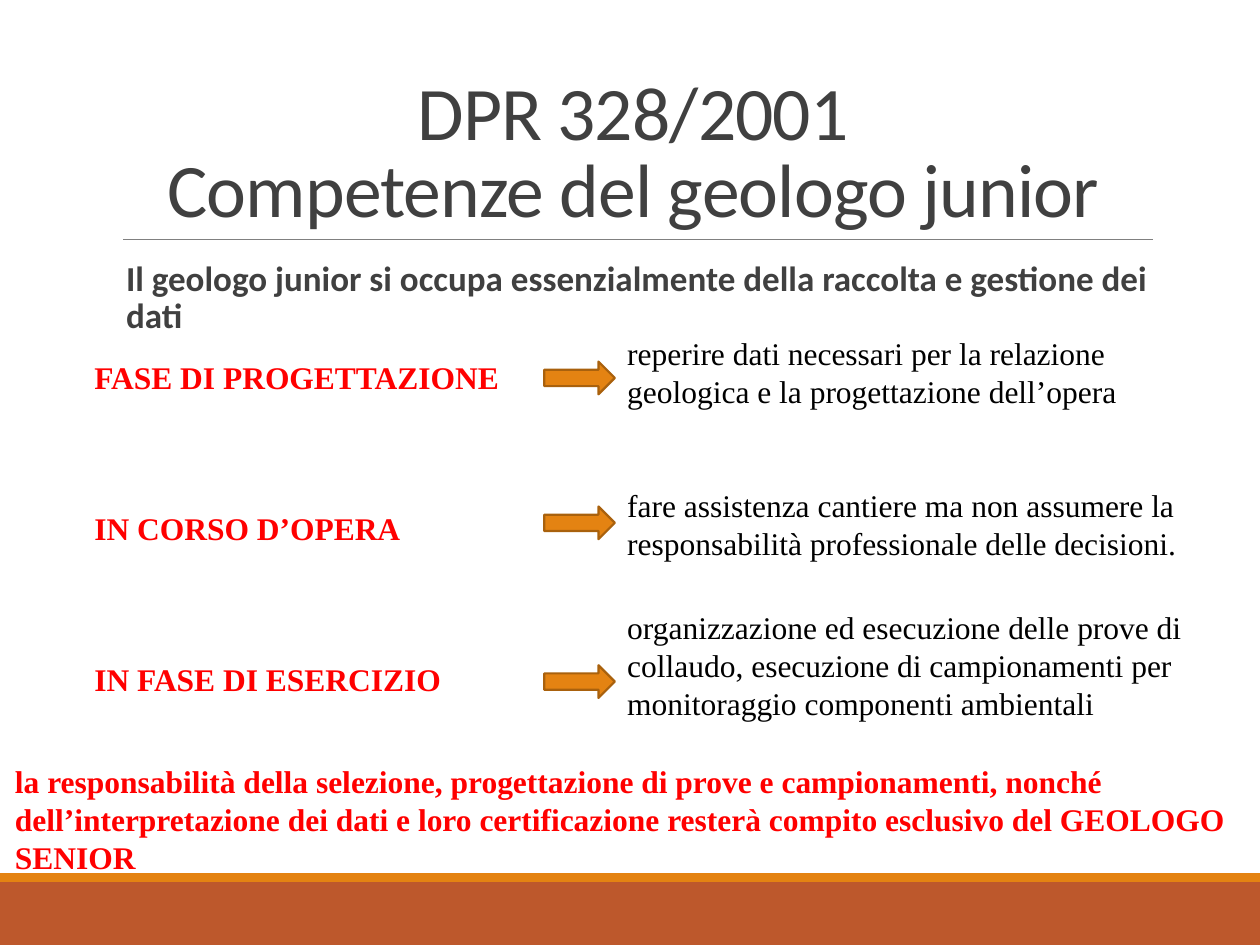
from lxml import etree
from pptx import Presentation
from pptx.dml.color import RGBColor
from pptx.enum.shapes import MSO_CONNECTOR, MSO_SHAPE
from pptx.enum.text import MSO_ANCHOR, MSO_AUTO_SIZE, PP_ALIGN
from pptx.oxml.ns import qn
from pptx.util import Inches, Pt

RECTANGLE, RIGHT_ARROW = MSO_SHAPE.RECTANGLE, MSO_SHAPE.RIGHT_ARROW
STRAIGHT = MSO_CONNECTOR.STRAIGHT
CENTER, LEFT = PP_ALIGN.CENTER, PP_ALIGN.LEFT
TOP, BOTTOM = MSO_ANCHOR.TOP, MSO_ANCHOR.BOTTOM
NO_AUTOFIT = MSO_AUTO_SIZE.NONE

THEME = {
    "heading_font": "Calibri",
    "text_font": "Times New Roman",
    "dark": RGBColor(0x40, 0x40, 0x40),
    "black": RGBColor(0, 0, 0),
    "red": RGBColor(0xFF, 0, 0),
    "rule": RGBColor(0x80, 0x80, 0x80),
    "rust": RGBColor(0xBD, 0x58, 0x2C),
    "orange": RGBColor(0xE4, 0x83, 0x12),
    "arrow_edge": RGBColor(0xA9, 0x61, 0x0D),
    "title_size": Pt(43.2),
    "lead_size": Pt(20),
    "text_size": Pt(18),
}


def add_text(page, left, top, width, height, text, color, bold=False):
    box = page.shapes.add_textbox(Inches(left), Inches(top), Inches(width), Inches(height))
    box.text_frame.word_wrap = True
    box.text_frame.text = text
    font = box.text_frame.paragraphs[0].runs[0].font
    font.name, font.size = THEME["text_font"], THEME["text_size"]
    font.color.rgb, font.bold = color, bold


def add_filled(page, kind, left, top, width, height, color):
    shape = page.shapes.add_shape(kind, Inches(left), Inches(top), Inches(width), Inches(height))
    shape.shadow.inherit = False
    shape.fill.solid()
    shape.fill.fore_color.rgb = color
    shape.line.fill.background()
    return shape


deck = Presentation()
deck.slide_width, deck.slide_height = Inches(10), Inches(7.5)
page = deck.slides.add_slide(deck.slide_layouts[1])

# Footer bands and the rule under the title
add_filled(page, RECTANGLE, 0, 7, 10, 0.5, THEME["rust"])
add_filled(page, RECTANGLE, 0, 6.93, 10, 0.07, THEME["orange"])
rule = page.shapes.add_connector(STRAIGHT, Inches(0.98), Inches(1.9), Inches(9.15), Inches(1.9))
rule.line.color.rgb, rule.line.width = THEME["rule"], Pt(0.5)
etree.SubElement(rule._element.spPr, qn("a:effectLst"))

# Title
title = page.shapes.title
title.left, title.top, title.width, title.height = Inches(0.9), Inches(0.31), Inches(8.25), Inches(1.59)
frame = title.text_frame
frame.text = "DPR 328/2001\vCompetenze del geologo junior"
frame.auto_size, frame.vertical_anchor = NO_AUTOFIT, BOTTOM
para = frame.paragraphs[0]
para.alignment, para.line_spacing = CENTER, 0.85
for span in para.runs:
    span.font.name, span.font.size = THEME["heading_font"], THEME["title_size"]
    span.font.color.rgb = THEME["dark"]
    span.font._element.set("spc", "-50")

# Lead sentence
body = page.placeholders[1]
body.left, body.top, body.width, body.height = Inches(0.9), Inches(2.02), Inches(8.25), Inches(4.4)
frame = body.text_frame
frame.text = "Il geologo junior si occupa essenzialmente della raccolta e gestione dei dati"
frame.auto_size, frame.vertical_anchor = NO_AUTOFIT, TOP
frame.margin_left = frame.margin_right = 0
para = frame.paragraphs[0]
para.alignment, para.line_spacing = LEFT, 0.9
para.space_before, para.space_after = Pt(0), Pt(2)
properties = para._p.get_or_add_pPr()
properties.set("marL", str(Inches(0.1)))
properties.set("indent", "0")
etree.SubElement(properties, qn("a:buNone"))
font = para.runs[0].font
font.name, font.size, font.bold = THEME["heading_font"], THEME["lead_size"], True
font.color.rgb = THEME["dark"]

# Phases: label, arrow top, task top, task height, task
phases = [
    ("FASE DI PROGETTAZIONE", 2.87, 2.6, 0.71,
     "reperire dati necessari per la relazione geologica e la progettazione dell’opera"),
    ("IN CORSO D’OPERA", 4.02, 3.81, 0.71,
     "fare assistenza cantiere ma non assumere la responsabilità professionale delle decisioni."),
    ("IN FASE DI ESERCIZIO", 5.28, 4.78, 1.01,
     "organizzazione ed esecuzione delle prove di collaudo, esecuzione di campionamenti "
     "per monitoraggio componenti ambientali"),
]
for row, (label, arrow_top, task_top, task_height, task) in enumerate(phases):
    add_text(page, 0.65, 2.79 + 1.2 * row, 3.6, 0.4, label, THEME["red"], bold=True)
    add_text(page, 4.88, task_top, 5, task_height, task, THEME["black"])
    arrow = add_filled(page, RIGHT_ARROW, 4.32, arrow_top, 0.56, 0.26, THEME["orange"])
    arrow.line.color.rgb, arrow.line.width = THEME["arrow_edge"], Pt(1.25)

# Closing warning
add_text(page, 0.02, 6, 10.08, 1.01,
         "la responsabilità della selezione, progettazione di prove e campionamenti, nonché "
         "dell’interpretazione dei dati e loro certificazione resterà compito esclusivo del "
         "GEOLOGO SENIOR", THEME["red"], bold=True)

deck.save("out.pptx")
